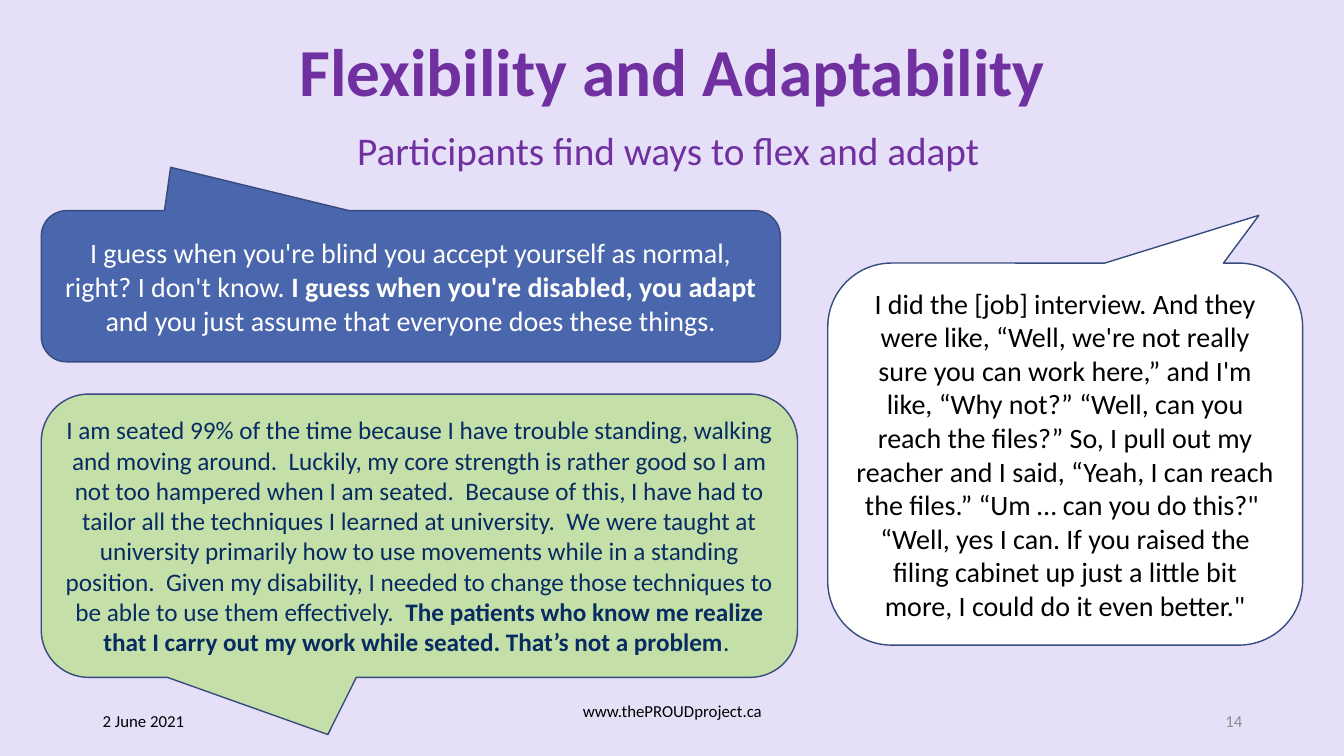
from pptx import Presentation
from pptx.dml.color import RGBColor
from pptx.enum.shapes import MSO_SHAPE as Shape
from pptx.enum.text import MSO_ANCHOR as Anchor, PP_ALIGN as Align
from pptx.util import Inches, Pt

COLORS = {
    "background": "E5E0F8", "purple": "7030A0", "blue": "4A66AC",
    "outline": "374B7F", "green": "C5DFA8", "navy": "072C62",
    "white": "FFFFFF", "black": "000000", "gray": "8C8C8C",
}

# Content
TITLE = "Flexibility and Adaptability"
SUBTITLE = "Participants find ways to flex and adapt "

# Each quote: box, pointer tip, fill, text colour, size, (text, bold) runs
QUOTES = [
    ((0.41, 2.09, 7.33, 1.5), (-0.325, -0.787), "blue", "white", 20, [
        ("I guess when you're blind you accept yourself as normal, right? "
         "I don't know. ", False),
        ("I guess when you're disabled, you adapt ", True),
        ("and you just assume that everyone does these things.", False),
    ]),
    ((0.41, 3.91, 7.5, 2.81), (-0.121, 0.702), "green", "navy", 18, [
        ("I am seated 99% of the time because I have trouble standing, walking "
         "and moving around.  Luckily, my core strength is rather good so I am "
         "not too hampered when I am seated.  Because of this, I have had to "
         "tailor all the techniques I learned at university.  We were taught at "
         "university primarily how to use movements while in a standing "
         "position.  Given my disability, I needed to change those techniques "
         "to be able to use them effectively.  ", False),
        ("The patients who know me realize that I carry out my work while "
         "seated. That’s not a problem", True),
        (". ", False),
    ]),
    ((8.21, 2.61, 4.71, 3.79), (0.408, -0.625), "white", "black", 20, [
        ("I did the [job] interview. And they were like, “Well, we're not "
         "really sure you can work here,” and I'm like, “Why not?” “Well, can "
         "you reach the files?” So, I pull out my reacher and I said, “Yeah, I "
         "can reach the files.” “Um … can you do this?\"  “Well, yes I can. If "
         "you raised the filing cabinet up just a little bit more, I could do "
         "it even better.\"", False),
    ]),
]

# Footer: text, left, width, alignment, colour, anchor
FOOTER = [
    ("2 June 2021", 0.92, 3, Align.LEFT, "black", Anchor.MIDDLE),
    ("www.thePROUDproject.ca", 4.42, 4.5, Align.CENTER, "black", Anchor.TOP),
    ("14", 9.42, 3, Align.RIGHT, "gray", Anchor.MIDDLE),
]


def color(name):
    return RGBColor.from_string(COLORS[name])


def place(part, left, top, width, height):
    part.left, part.top = Inches(left), Inches(top)
    part.width, part.height = Inches(width), Inches(height)


def style(paragraph, size, text_color, align=Align.CENTER):
    paragraph.alignment = align
    paragraph.font.name = "Calibri"
    paragraph.font.size = Pt(size)
    paragraph.font.color.rgb = color(text_color)


def add_text(box, text, size, text_color, align=Align.CENTER, anchor=Anchor.TOP):
    label = slide.shapes.add_textbox(*map(Inches, box))
    frame = label.text_frame
    frame.word_wrap = True
    frame.vertical_anchor = anchor
    frame.text = text
    style(frame.paragraphs[0], size, text_color, align)
    return frame


prs = Presentation()
prs.slide_width, prs.slide_height = Inches(13.33), Inches(7.5)
slide = prs.slides.add_slide(prs.slide_layouts[5])
slide.background.fill.solid()
slide.background.fill.fore_color.rgb = color("background")

# Title and subtitle
title = slide.shapes.title
place(title, 0.92, 0.23, 11.5, 1.02)
title.text_frame.text = TITLE
title.text_frame.vertical_anchor = Anchor.MIDDLE
heading = title.text_frame.paragraphs[0]
style(heading, 48, "purple")
heading.font.bold = True
heading.line_spacing = 0.9

subtitle = add_text((0.92, 1.26, 11.5, 0.55), SUBTITLE, 28, "purple")
subtitle.paragraphs[0].line_spacing = 0.9

# Quotes in speech bubbles
for box, tip, fill, text_color, size, runs in QUOTES:
    bubble = slide.shapes.add_shape(Shape.ROUNDED_RECTANGULAR_CALLOUT,
                                    *map(Inches, box))
    bubble.adjustments[0], bubble.adjustments[1] = tip
    bubble.adjustments[2] = 0.167
    bubble.shadow.inherit = False
    bubble.fill.solid()
    bubble.fill.fore_color.rgb = color(fill)
    bubble.line.color.rgb = color("outline")
    bubble.line.width = Pt(1)
    bubble.text_frame.word_wrap = True
    bubble.text_frame.vertical_anchor = Anchor.MIDDLE
    quote = bubble.text_frame.paragraphs[0]
    style(quote, size, text_color)
    for text, bold in runs:
        run = quote.add_run()
        run.text = text
        run.font.bold = bold

# Footer
for text, left, width, align, text_color, anchor in FOOTER:
    footer = add_text((left, 6.95, width, 0.4), text, 12, text_color, align, anchor)
    if anchor == Anchor.TOP:
        footer.margin_top = 0

prs.save("out.pptx")
